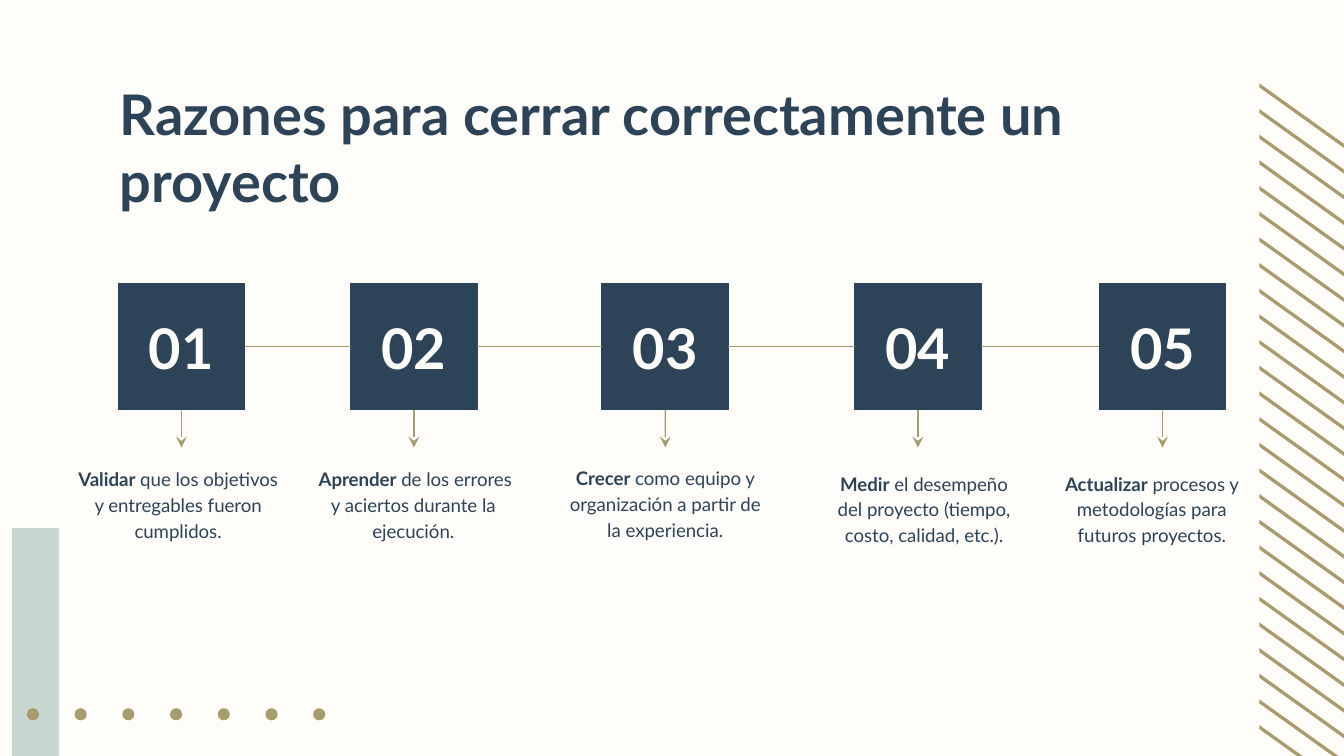
from dataclasses import dataclass

from lxml import etree
from pptx import Presentation
from pptx.dml.color import RGBColor
from pptx.enum.shapes import MSO_CONNECTOR, MSO_SHAPE
from pptx.enum.text import MSO_ANCHOR, MSO_AUTO_SIZE, PP_ALIGN
from pptx.oxml.ns import qn
from pptx.util import Emu, Inches, Pt

RECT, OVAL = MSO_SHAPE.RECTANGLE, MSO_SHAPE.OVAL
LINE = MSO_CONNECTOR.STRAIGHT
TOP, MIDDLE = MSO_ANCHOR.TOP, MSO_ANCHOR.MIDDLE
LEFT, CENTER = PP_ALIGN.LEFT, PP_ALIGN.CENTER
RIGHT_SIDE, LEFT_SIDE, BOTTOM = 3, 1, 2

# The grid has 100 columns across; rows are as tall as columns are wide
WIDE, HIGH = 100, 56.25
TILE, TILE_TOP = 9.4, 21.1


@dataclass(frozen=True)
class Theme:
    paper: RGBColor = RGBColor(0xFF, 0xFD, 0xFA)
    navy: RGBColor = RGBColor(0x2C, 0x43, 0x58)
    gold: RGBColor = RGBColor(0xA8, 0x9C, 0x6C)
    sage: RGBColor = RGBColor(0xC7, 0xD6, 0xD1)
    font: str = "Lato"
    large: int = 30
    small: int = 10
    rule: float = 0.75


@dataclass(frozen=True)
class Step:
    left: float
    lead: str
    rest: str
    text_left: float
    text_top: float
    text_wide: float


THEME = Theme()
STEPS = [
    Step(8.8, "Validar", " que los objetivos y entregables fueron cumplidos.", 4.5, 33.6, 17.5),
    Step(26.1, " Aprender", " de los errores y aciertos durante la ejecución.", 22, 33.6, 17.5),
    Step(44.8, "Crecer", " como equipo y organización a partir de la experiencia.", 41.2, 33.5, 16.6),
    Step(63.6, "Medir", " el desempeño del proyecto (tiempo, costo, calidad, etc.).", 60.5, 33.9, 16.5),
    Step(81.8, "Actualizar", " procesos y metodologías para futuros proyectos.", 78, 33.9, 15.4),
]


def cell(count: float) -> Emu:
    """Turn a count of grid columns or rows into a length."""
    return Inches(count / 10)


def style(run, size: int, color: RGBColor, bold: bool) -> None:
    run.font.name = THEME.font
    run.font.size = Pt(size)
    run.font.color.rgb = color
    run.font.bold = bold


def set_frame(frame, anchor) -> None:
    frame.word_wrap = True
    frame.auto_size = MSO_AUTO_SIZE.NONE
    frame.vertical_anchor = anchor
    frame.margin_left = frame.margin_right = cell(1)
    frame.margin_top = frame.margin_bottom = cell(1)


def paint(shape, color: RGBColor) -> None:
    shape.shadow.inherit = False
    shape.fill.solid()
    shape.fill.fore_color.rgb = color
    shape.line.fill.background()


def add_block(slide, kind, left: float, top: float, wide: float, high: float, color: RGBColor):
    shape = slide.shapes.add_shape(kind, cell(left), cell(top), cell(wide), cell(high))
    paint(shape, color)
    return shape


def add_stripe(slide, top: float) -> None:
    left, right, drop, thick = 93.7, 101.1, 5.3, 0.3
    pen = slide.shapes.build_freeform(cell(left), cell(top))
    pen.add_line_segments([
        (cell(right), cell(top + drop)),
        (cell(right), cell(top + drop + thick)),
        (cell(left), cell(top + thick)),
    ], close=True)
    paint(pen.convert_to_shape(), THEME.gold)


def add_tile(slide, step: Step, label: str):
    tile = add_block(slide, RECT, step.left, TILE_TOP, TILE, TILE, THEME.navy)
    tile.line.color.rgb = THEME.navy
    tile.line.width = Pt(THEME.rule)
    set_frame(tile.text_frame, MIDDLE)
    tile.text_frame.text = label
    para = tile.text_frame.paragraphs[0]
    para.alignment = CENTER
    style(para.runs[0], THEME.large, THEME.paper, True)
    return tile


def add_note(slide, step: Step) -> None:
    box = slide.shapes.add_textbox(
        cell(step.text_left), cell(step.text_top), cell(step.text_wide), cell(6.3))
    set_frame(box.text_frame, TOP)
    para = box.text_frame.paragraphs[0]
    para.alignment = CENTER
    para.line_spacing = 1.15
    para.space_after = Pt(12)
    for text, bold in ((step.lead, True), (step.rest, False)):
        run = para.add_run()
        run.text = text
        style(run, THEME.small, THEME.navy, bold)


def add_rule(slide, x1: float, y1: float, x2: float, y2: float):
    rule = slide.shapes.add_connector(LINE, cell(x1), cell(y1), cell(x2), cell(y2))
    rule.line.color.rgb = THEME.gold
    rule.line.width = Pt(THEME.rule)
    etree.SubElement(rule._element.spPr, qn("a:effectLst"))
    return rule


def add_arrow(slide, step: Step, tile) -> None:
    mid, base = step.left + TILE / 2, TILE_TOP + TILE
    arrow = add_rule(slide, mid, base, mid, base + 2.8)
    arrow.begin_connect(tile, BOTTOM)
    etree.SubElement(arrow.line._get_or_add_ln(), qn("a:tailEnd"), type="stealth")


def add_title(slide, text: str) -> None:
    title = slide.shapes.title
    title.left, title.top = cell(7.9), cell(4.9)
    title.width, title.height = cell(84.3), cell(6.3)
    set_frame(title.text_frame, TOP)
    title.text_frame.text = text
    para = title.text_frame.paragraphs[0]
    para.alignment = LEFT
    style(para.runs[0], THEME.large, THEME.navy, True)


def main() -> None:
    deck = Presentation()
    deck.slide_width, deck.slide_height = cell(WIDE), cell(HIGH)
    slide = deck.slides.add_slide(deck.slide_layouts[5])
    slide.background.fill.solid()
    slide.background.fill.fore_color.rgb = THEME.paper

    # Decoration: slanted stripes, corner bar and dots
    for row in range(26):
        add_stripe(slide, 6.2 + 1.91 * row)
    add_block(slide, RECT, 0.9, 39.3, 3.5, HIGH - 39.3, THEME.sage)
    for col in range(7):
        add_block(slide, OVAL, 2 + 3.55 * col, 52.7, 0.9, 0.9, THEME.gold)

    add_title(slide, "Razones para cerrar correctamente un proyecto")

    # Numbered steps, each with an arrow down to its reason
    tiles = [add_tile(slide, step, f"{num:02}") for num, step in enumerate(STEPS, 1)]
    for step, tile in zip(STEPS, tiles):
        add_arrow(slide, step, tile)
        add_note(slide, step)

    # Links between neighbouring steps
    mid = TILE_TOP + TILE / 2
    for here, after, tile, following in zip(STEPS, STEPS[1:], tiles, tiles[1:]):
        link = add_rule(slide, here.left + TILE, mid, after.left, mid)
        link.begin_connect(tile, RIGHT_SIDE)
        link.end_connect(following, LEFT_SIDE)

    deck.save("out.pptx")


if __name__ == "__main__":
    main()
